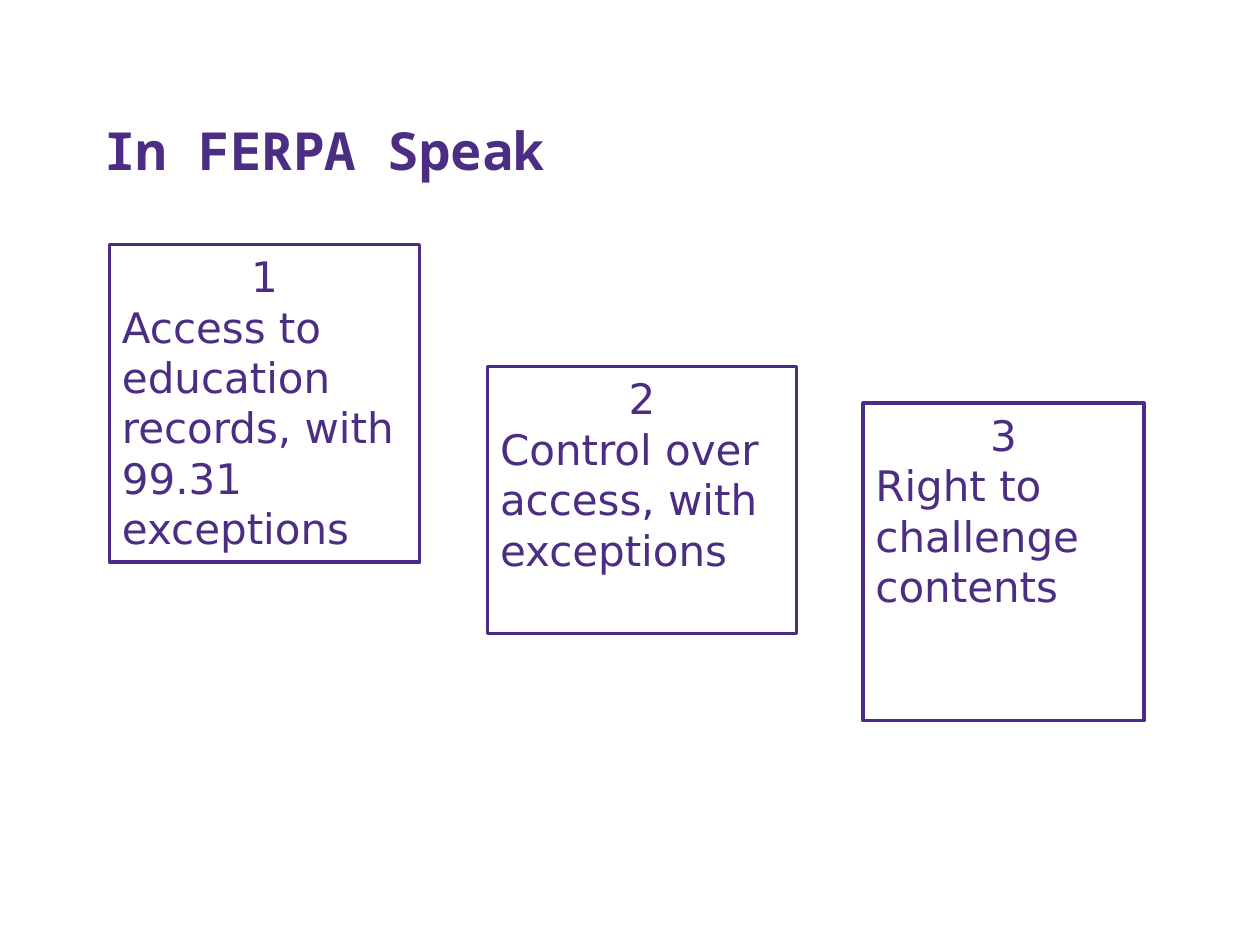
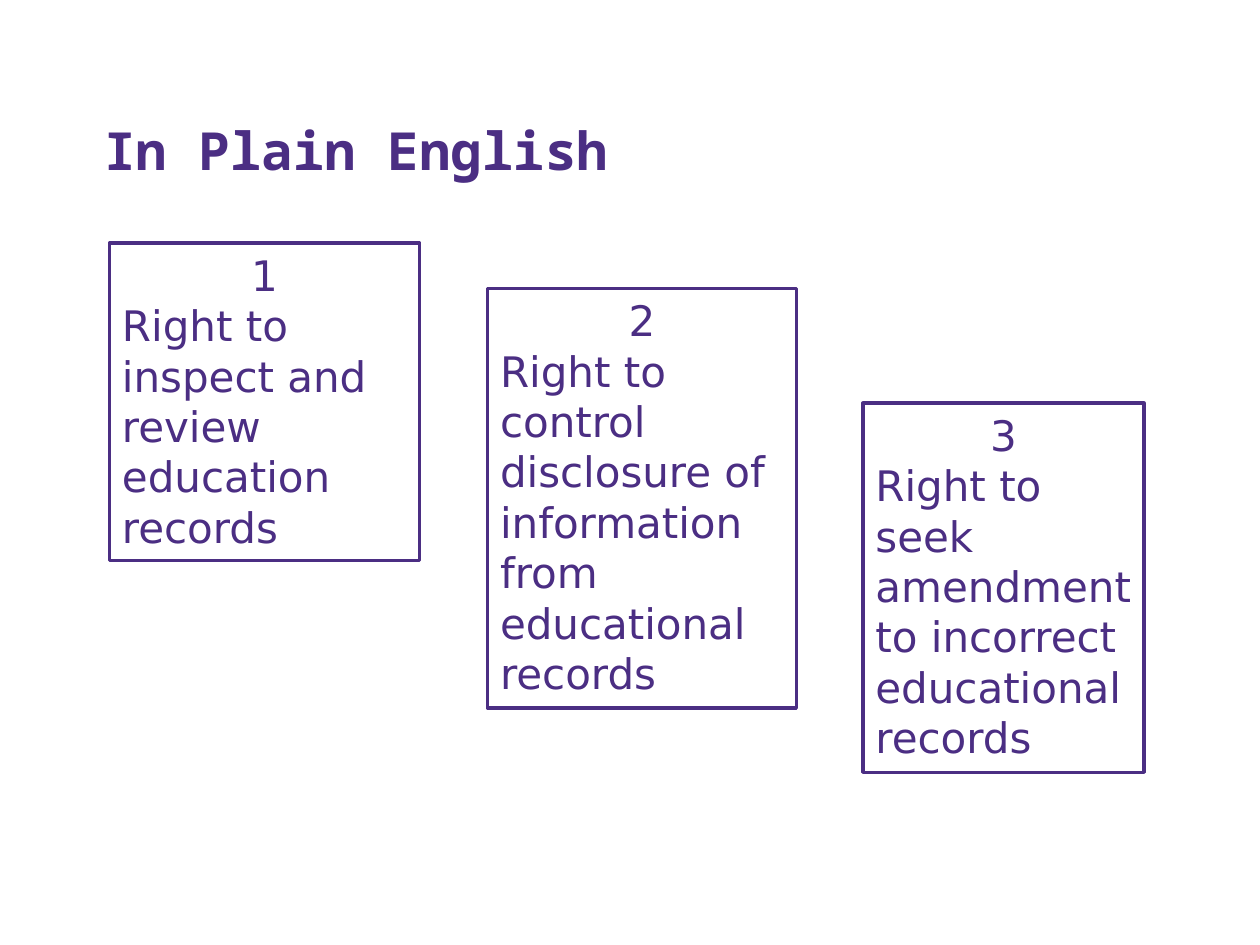
import pptx
import pptx.dml.color
import pptx.enum.shapes
import pptx.enum.text
import pptx.util

Inches = pptx.util.Inches
ALIGN = pptx.enum.text.PP_ALIGN
ANCHOR = pptx.enum.text.MSO_ANCHOR

COLORS = {"purple": "4B2E83"}
PURPLE = pptx.dml.color.RGBColor.from_string(COLORS["purple"])

TITLE_FONT = {"name": "Noto Sans Mono", "size": pptx.util.Pt(30), "bold": True}
BODY_FONT = {"name": "DejaVu Sans", "size": pptx.util.Pt(24), "bold": False}
TITLE_FRAME = {"word_wrap": True, "vertical_anchor": ANCHOR.BOTTOM}
BOX_FRAME = {"word_wrap": True, "vertical_anchor": ANCHOR.TOP}

COLUMNS = [(0.87, 2.46), (3.87, 2.45), (6.85, 2.23)]

SLIDES = [
    ("In FERPA Speak", [
        (1.94, 2.52, "Access to education records, with 99.31 exceptions"),
        (2.91, 2.12, "Control over access, with exceptions"),
        (3.2, 2.52, "Right to challenge contents"),
    ]),
    ("In Plain English", [
        (1.93, 2.52, "Right to inspect and review education records"),
        (2.29, 3.33, "Right to control disclosure of information from educational records"),
        (3.2, 2.93, "Right to seek amendment to incorrect educational records"),
    ]),
]


def write_text(shape, frame_format, font_format, lines):
    text_frame = shape.text_frame
    for name, value in frame_format.items():
        setattr(text_frame, name, value)
    text_frame.text = "\n".join(text for text, alignment in lines)
    for paragraph, (text, alignment) in zip(text_frame.paragraphs, lines):
        paragraph.alignment = alignment
        for name, value in font_format.items():
            setattr(paragraph.font, name, value)
        paragraph.font.color.rgb = PURPLE


presentation = pptx.Presentation()
presentation.slide_width = Inches(10)
presentation.slide_height = Inches(7.5)

for title, rights in SLIDES:
    slide = presentation.slides.add_slide(presentation.slide_layouts[6])
    title_box = slide.shapes.add_textbox(
        Inches(0.73), Inches(0.41), Inches(8.95), Inches(1.08))
    write_text(title_box, TITLE_FRAME, TITLE_FONT, [(title, ALIGN.LEFT)])

    for number, ((left, width), (top, height, right)) in enumerate(zip(COLUMNS, rights), 1):
        box = slide.shapes.add_shape(
            pptx.enum.shapes.MSO_SHAPE.RECTANGLE,
            Inches(left), Inches(top), Inches(width), Inches(height))
        box.shadow.inherit = False
        box.fill.background()
        box.line.color.rgb = PURPLE
        box.line.width = pptx.util.Pt(2)
        write_text(box, BOX_FRAME, BODY_FONT,
                   [(str(number), ALIGN.CENTER), (right, ALIGN.LEFT)])

presentation.save("out.pptx")
